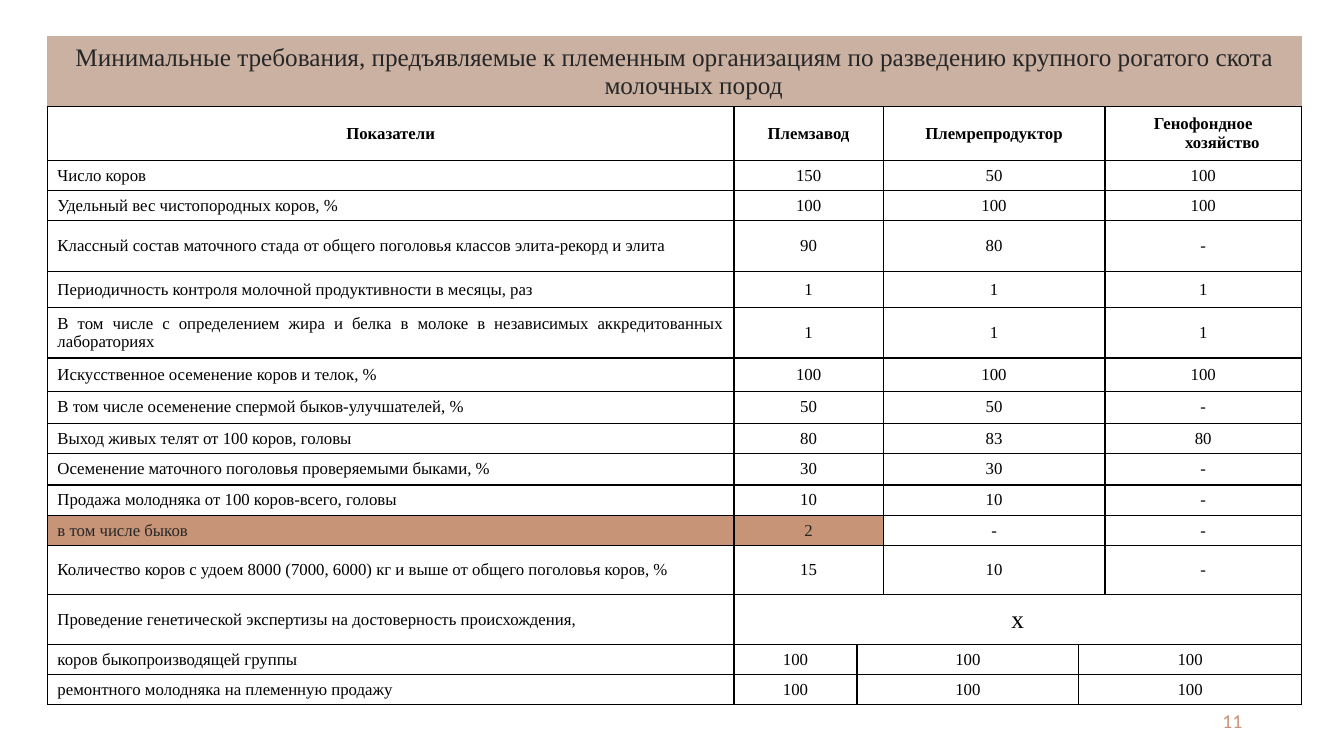
"""Build the slide with minimum requirements for dairy cattle breeding organisations."""
from dataclasses import dataclass
from typing import Any, Optional

import lxml.etree
import pptx
import pptx.dml.color
import pptx.enum.text
import pptx.oxml.ns
import pptx.util

PX = 9144
ALIGN = pptx.enum.text.PP_ALIGN
MIDDLE = pptx.enum.text.MSO_ANCHOR.MIDDLE
QN = pptx.oxml.ns.qn


@dataclass(frozen=True)
class Theme:
    """Colours, fonts and type sizes of the slide."""
    ink: str = "000000"
    soft_ink: str = "262626"
    title_fill: str = "CAB1A2"
    accent: str = "C79478"
    table_font: str = "Times New Roman"
    number_font: str = "Calibri"
    large: int = 18
    number: int = 14
    body: int = 12
    border: int = 1


@dataclass(frozen=True)
class Requirement:
    """One row: its height, texts, spans and departures from the usual look."""
    height: int
    texts: tuple[str, ...]
    spans: tuple[int, ...] = (1, 2, 2, 1)
    label_align: Any = ALIGN.LEFT
    hanging: bool = True
    bold: bool = False
    label_size: int = 12
    value_size: int = 12
    highlighted: int = 0
    fill: Optional[str] = None
    sides: str = "LRTB"


THEME = Theme()
COLUMNS = (681, 122, 26, 194, 26, 195)
HANG = 38
SPLIT = (1, 1, 2, 2)
ROWS = (
    Requirement(69, ("Минимальные требования, предъявляемые к племенным организациям по разведению "
                     "крупного рогатого скота молочных пород",), (6,), ALIGN.CENTER,
                label_size=THEME.large, highlighted=1, fill=THEME.title_fill, sides="B"),
    Requirement(53, ("Показатели", "Племзавод", "Племрепродуктор", "Генофондное хозяйство"),
                label_align=ALIGN.CENTER, bold=True),
    Requirement(30, ("Число коров", "150", "50", "100")),
    Requirement(29, ("Удельный вес чистопородных коров, %", "100", "100", "100")),
    Requirement(50, ("Классный состав маточного стада от общего поголовья классов элита-рекорд и элита",
                     "90", "80", "-")),
    Requirement(36, ("Периодичность контроля молочной продуктивности в месяцы, раз", "1", "1", "1")),
    Requirement(49, ("В том числе с определением жира и белка в молоке в независимых "
                     "аккредитованных лабораториях", "1", "1", "1"),
                label_align=ALIGN.JUSTIFY, hanging=False),
    Requirement(33, ("Искусственное осеменение коров и телок, %", "100", "100", "100")),
    Requirement(32, ("В том числе осеменение спермой быков-улучшателей, %", "50", "50", "-")),
    Requirement(30, ("Выход живых телят от 100 коров, головы", "80", "83", "80")),
    Requirement(31, ("Осеменение маточного поголовья проверяемыми быками, %", "30", "30", "-")),
    Requirement(30, ("Продажа молодняка от 100 коров-всего, головы", "10", "10", "-")),
    Requirement(30, ("в том числе быков", "2", "-", "-"), highlighted=2, fill=THEME.accent),
    Requirement(49, ("Количество коров с удоем 8000 (7000, 6000) кг и выше от общего поголовья коров, %",
                     "15", "10", "-")),
    Requirement(49, ("Проведение генетической экспертизы на достоверность происхождения,", "х"),
                (1, 5), hanging=False, value_size=THEME.large),
    Requirement(30, ("коров быкопроизводящей группы", "100", "100", "100"), SPLIT),
    Requirement(30, ("ремонтного молодняка на племенную продажу", "100", "100", "100"), SPLIT),
)


def px(length: int) -> pptx.util.Emu:
    """Turn px into EMU."""
    return pptx.util.Emu(length * PX)


def rgb(colour: str) -> pptx.dml.color.RGBColor:
    """Turn a hex code into a colour."""
    return pptx.dml.color.RGBColor.from_string(colour)


def write(paragraph: Any, text: str, align: Any, colour: str, formats: dict[str, Any]) -> None:
    """Write one run with its alignment, colour and font formats."""
    paragraph.alignment = align
    run = paragraph.add_run()
    run.text = text
    run.font.color.rgb = rgb(colour)
    for attribute, value in formats.items():
        setattr(run.font, attribute, value)


def draw_borders(cell: Any, sides: str) -> None:
    """Rule the named sides of a cell and clear the others."""
    properties = cell._tc.get_or_add_tcPr()
    for side in "LRTB":
        line = lxml.etree.SubElement(properties, QN(f"a:ln{side}"),
                                     w=str(pptx.util.Pt(THEME.border)))
        if side in sides:
            paint = lxml.etree.SubElement(line, QN("a:solidFill"))
            lxml.etree.SubElement(paint, QN("a:srgbClr"), val=THEME.ink)
        else:
            lxml.etree.SubElement(line, QN("a:noFill"))


def fill_row(table: Any, index: int, row: Requirement) -> None:
    """Merge, rule, fill and write the cells of one row."""
    table.rows[index].height = px(row.height)
    column = 0
    for position, (text, span) in enumerate(zip(row.texts, row.spans)):
        is_label = position == 0
        is_highlighted = position < row.highlighted
        cell = table.cell(index, column)
        if span > 1:
            cell.merge(table.cell(index, column + span - 1))
        for covered in range(column, column + span):
            part = table.cell(index, covered)
            draw_borders(part, row.sides)
            if is_highlighted:
                part.fill.solid()
                part.fill.fore_color.rgb = rgb(row.fill)
            else:
                part.fill.background()
        cell.vertical_anchor = MIDDLE
        paragraph = cell.text_frame.paragraphs[0]
        if row.hanging or not is_label:
            properties = paragraph._p.get_or_add_pPr()
            properties.set("marL", str(px(HANG)))
            properties.set("indent", str(px(-HANG)))
        write(paragraph, text, row.label_align if is_label else ALIGN.CENTER,
              THEME.soft_ink if is_highlighted else THEME.ink,
              {"name": THEME.table_font, "bold": row.bold,
               "size": pptx.util.Pt(row.label_size if is_label else row.value_size)})
        column += span


def draw_requirements(slide: Any) -> None:
    """Draw the table of requirements."""
    table = slide.shapes.add_table(len(ROWS), len(COLUMNS), px(47), px(36), px(sum(COLUMNS)),
                                   px(sum(row.height for row in ROWS))).table
    for attribute, value in {"first_row": False, "horz_banding": False}.items():
        setattr(table, attribute, value)
    for column, width in zip(table.columns, COLUMNS):
        column.width = px(width)
    for index, row in enumerate(ROWS):
        fill_row(table, index, row)


def draw_page_number(slide: Any) -> None:
    """Draw the page number."""
    frame = slide.shapes.add_textbox(px(942), px(695), px(300), px(40)).text_frame
    for attribute, value in {"word_wrap": True, "vertical_anchor": MIDDLE}.items():
        setattr(frame, attribute, value)
    write(frame.paragraphs[0], "11", ALIGN.RIGHT, THEME.accent,
          {"name": THEME.number_font, "size": pptx.util.Pt(THEME.number)})


def main() -> None:
    """Build and save the presentation."""
    deck = pptx.Presentation()
    deck.slide_width, deck.slide_height = px(1333), px(750)
    slide = deck.slides.add_slide(deck.slide_layouts[6])
    draw_page_number(slide)
    draw_requirements(slide)
    deck.save("out.pptx")


if __name__ == "__main__":
    main()
